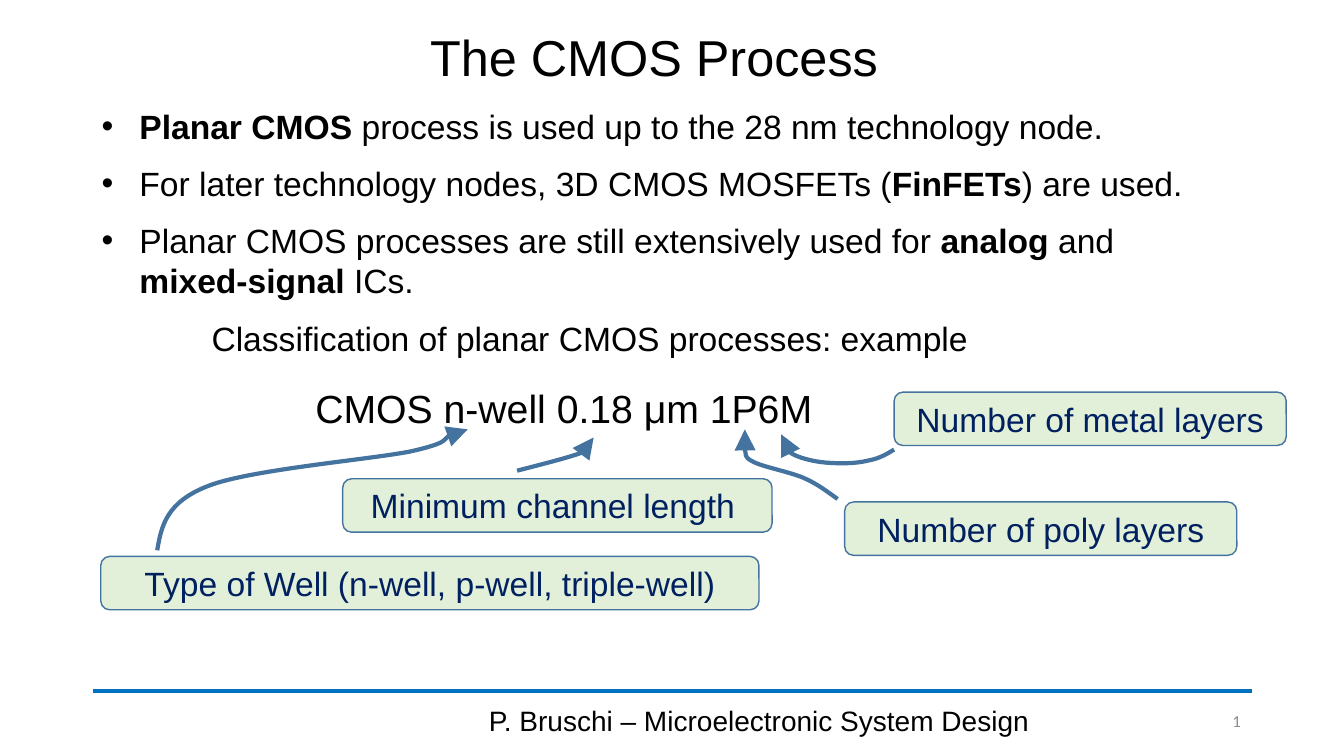
"""Builds the slide on the CMOS process and its naming scheme."""
from dataclasses import dataclass, field

from lxml import etree
from pptx import Presentation, util as u
from pptx.dml.color import RGBColor
from pptx.enum import shapes, text
from pptx.oxml.ns import qn

H = u.Inches(7.5)
W = H * 16 // 9
COL, ROW = W / 40, H / 30
COLORS = {"black": "000000", "rule": "0070C0", "gray": "8C8C8C",
          "navy": "002060", "green": "E2F0D9", "steel": "43739E"}
ALIGN, ANCHOR = text.PP_ALIGN, text.MSO_ANCHOR
Point = tuple[float, float]


@dataclass
class Label:
    """Text block placed in grid units; ** switches bold on and off."""
    box: tuple[float, float, float, float]
    lines: list[str]
    size: float = 24
    color: str = "black"
    font: str = "Arial"
    bullet: bool = False
    frame: dict = field(default_factory=dict)
    para: dict = field(default_factory=dict)


@dataclass
class Arrow:
    """Chain of cubic curves: a start, then three points per curve."""
    points: list[Point]


MIDDLE = {"vertical_anchor": ANCHOR.MIDDLE}
GROW = {"auto_size": text.MSO_AUTO_SIZE.SHAPE_TO_FIT_TEXT}
CENTER = {"alignment": ALIGN.CENTER}
LABELS = [
    Label((2.22, 0.76, 34.5, 3.24), ["The CMOS Process"], 36, frame=MIDDLE,
          para=CENTER | {"line_spacing": 0.9}),
    Label((13.26, 27.8, 18.66, 1.6), ["P. Bruschi – Microelectronic System Design"],
          20, frame=MIDDLE, para=CENTER),
    Label((34.35, 27.8, 2.88, 1.6), ["1"], 12, "gray", "Calibri", frame=MIDDLE,
          para={"alignment": ALIGN.RIGHT}),
    Label((2.73, 4, 34.08, 8.2), [
        "**Planar CMOS** process is used up to the 28 nm technology node.",
        "For later technology nodes, 3D CMOS MOSFETs (**FinFETs**) are used.",
        "Planar CMOS processes are still extensively used for **analog** and "
        "**mixed-signal** ICs."], bullet=True, frame=GROW,
        para={"space_after": u.Pt(12)}),
    Label((6, 12.42, 23.34, 2), ["Classification of planar CMOS processes: example"],
          frame=GROW | {"word_wrap": False}),
    Label((9.09, 15.06, 18.96, 2.28), ["CMOS n-well 0.18 μm 1P6M"], 28, frame=GROW),
]
TAGS = [Label((x, y, w, 2.12), [line], color="navy", frame=MIDDLE, para=CENTER)
        for x, y, w, line in [
            (10.2, 19, 12.78, "Minimum channel length "),
            (3, 22.08, 19.59, "Type of Well (n-well, p-well, triple-well)"),
            (25.14, 19.92, 11.67, "Number of poly layers"),
            (26.61, 15.56, 11.67, "Number of metal layers")]]
ARROWS = [
    Arrow([(4.68, 21.84), (4.8, 20.88), (4.95, 19.92), (6.21, 19.28),
           (7.44, 18.64), (10.98, 18.24), (12.21, 17.92),
           (13.41, 17.56), (13.14, 17.4), (13.44, 17.24),
           (13.71, 17.12), (13.83, 17.08), (13.92, 17.04)]),
    Arrow([(15.39, 18.68), (16.2, 18.4), (17.04, 18.12), (17.4, 17.92),
           (17.79, 17.68), (17.67, 17.36), (17.67, 17.36)]),
    Arrow([(24.93, 19.8), (24.63, 19.52), (24.33, 19.2), (23.91, 18.96),
           (23.49, 18.72), (22.68, 18.52), (22.41, 18.32),
           (22.11, 18.12), (22.23, 18.04), (22.17, 17.84),
           (22.14, 17.64), (22.17, 17.04), (22.17, 17.04)]),
    Arrow([(26.61, 17.84), (26.37, 18.04), (26.16, 18.2), (25.83, 18.28),
           (25.47, 18.4), (24.99, 18.4), (24.6, 18.36),
           (24.21, 18.32), (23.73, 18.16), (23.52, 17.96),
           (23.28, 17.8), (23.25, 17.24), (23.25, 17.24)]),
]


def rgb(name: str) -> RGBColor:
    """Look up a named colour."""
    return RGBColor.from_string(COLORS[name])


def place(x: float, y: float) -> tuple[int, int]:
    """Turn columns and rows into slide units."""
    return round(x * COL), round(y * ROW)


def apply(target, values: dict) -> None:
    """Set each named attribute on the target."""
    for name, value in values.items():
        setattr(target, name, value)


def stroke(line, color: str, width: float) -> None:
    """Give a line its colour and width."""
    line.color.rgb = rgb(color)
    line.width = u.Pt(width)


def write(tf, label: Label) -> None:
    """Fill a text frame with the label's paragraphs."""
    apply(tf, {"word_wrap": True} | label.frame)
    for i, line in enumerate(label.lines):
        p = tf.paragraphs[0] if i == 0 else tf.add_paragraph()
        apply(p, label.para)
        if label.bullet:
            pPr = p._p.get_or_add_pPr()
            pPr.set("marL", str(u.Pt(27)))
            pPr.set("indent", str(-u.Pt(27)))
            etree.SubElement(pPr, qn("a:buFont")).set("typeface", "Arial")
            etree.SubElement(pPr, qn("a:buChar")).set("char", "•")
        for j, part in enumerate(line.split("**")):
            if part:
                r = p.add_run()
                r.text = part
                apply(r.font, {"name": label.font, "size": u.Pt(label.size),
                               "bold": j % 2 == 1})
                r.font.color.rgb = rgb(label.color)


def draw_label(s, label: Label) -> None:
    """Add a plain text box."""
    x, y, w, h = label.box
    write(s.shapes.add_textbox(*place(x, y), *place(w, h)).text_frame, label)


def draw_tag(s, tag: Label) -> None:
    """Add a rounded green tag."""
    x, y, w, h = tag.box
    sp = s.shapes.add_shape(shapes.MSO_SHAPE.ROUNDED_RECTANGLE,
                            *place(x, y), *place(w, h))
    sp.shadow.inherit = False
    sp.fill.solid()
    sp.fill.fore_color.rgb = rgb("green")
    stroke(sp.line, "steel", 1)
    write(sp.text_frame, tag)


def bend(sp) -> None:
    """Join every three segments of a freeform into one cubic curve."""
    steps = list(sp._element.iter(qn("a:lnTo")))
    for i in range(0, len(steps), 3):
        curve = etree.Element(qn("a:cubicBezTo"))
        steps[i].addprevious(curve)
        for step in steps[i:i + 3]:
            curve.append(step[0])
            step.getparent().remove(step)


def draw_arrow(s, arrow: Arrow) -> None:
    """Add a curved arrow with a large triangle head."""
    start, *rest = [place(*point) for point in arrow.points]
    builder = s.shapes.build_freeform(*start, scale=1.0)
    builder.add_line_segments(rest, close=False)
    sp = builder.convert_to_shape()
    bend(sp)
    sp.shadow.inherit = False
    sp.fill.background()
    stroke(sp.line, "steel", 3)
    head = etree.SubElement(sp.line._get_or_add_ln(), qn("a:tailEnd"))
    for name, value in {"type": "triangle", "w": "lg", "len": "lg"}.items():
        head.set(name, value)


def draw_rule(s, start: Point, end: Point) -> None:
    """Add the line above the footer."""
    sp = s.shapes.add_connector(shapes.MSO_CONNECTOR.STRAIGHT,
                                *place(*start), *place(*end))
    stroke(sp.line, "rule", 2.75)
    etree.SubElement(sp._element.spPr, qn("a:effectLst"))


def main() -> None:
    """Build and save the slide."""
    prs = Presentation()
    apply(prs, {"slide_width": W, "slide_height": H})
    s = prs.slides.add_slide(prs.slide_layouts[6])
    draw_rule(s, (2.76, 27.42), (37.26, 27.42))
    for draw, items in ((draw_label, LABELS), (draw_tag, TAGS), (draw_arrow, ARROWS)):
        for item in items:
            draw(s, item)
    prs.save("out.pptx")


if __name__ == "__main__":
    main()
